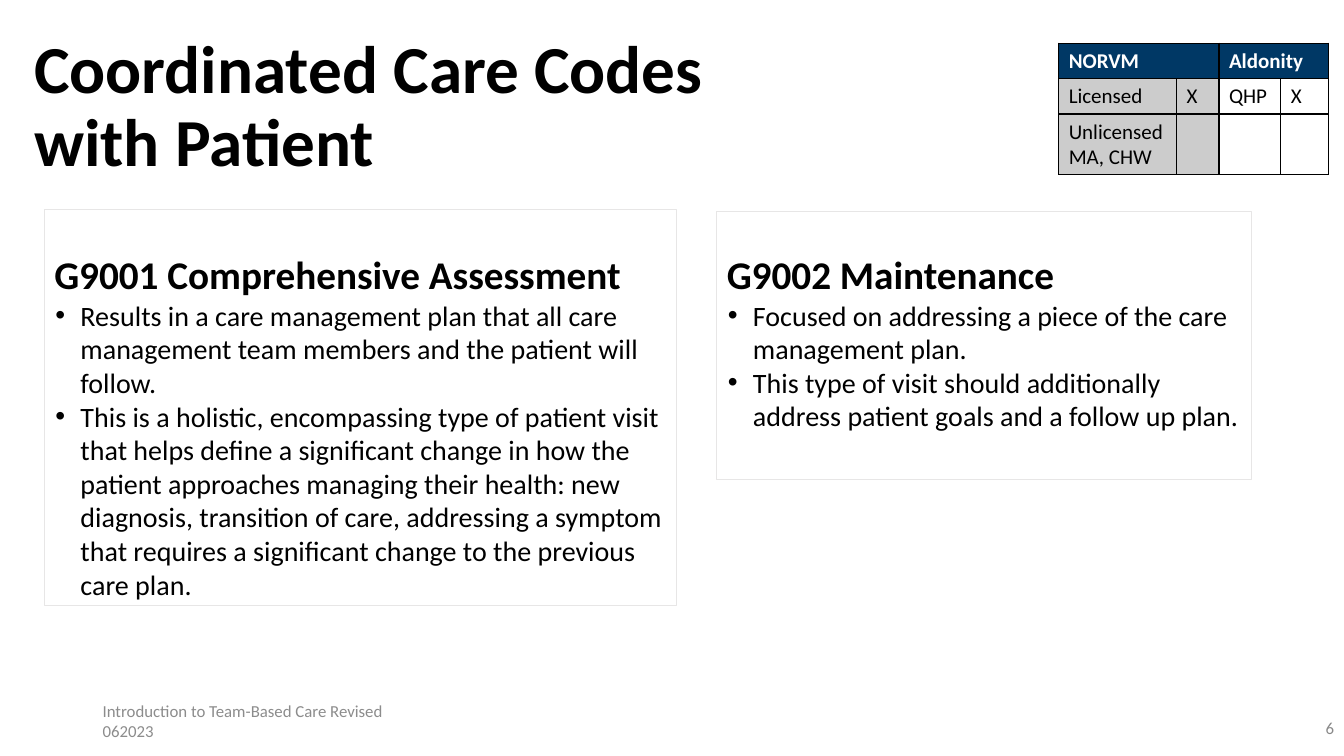
import pptx
import pptx.util
import pptx.dml.color
import pptx.enum.shapes
import pptx.enum.text
import pptx.oxml.ns
import lxml.etree

Anchor = pptx.enum.text.MSO_ANCHOR
Align = pptx.enum.text.PP_ALIGN
qn = pptx.oxml.ns.qn


def color(hex_string):
    return pptx.dml.color.RGBColor.from_string(hex_string)


class CareSlide:
    """Style and current slide; lengths are percentages of the slide's size."""

    FONT = "Calibri"
    BLACK, WHITE, NAVY = "000000", "FFFFFF", "003865"
    PANEL_LINE, SHADE = "E7E6E6", "CCCCCC"

    def __init__(self, deck):
        self.deck = deck
        self.slide = deck.slides.add_slide(deck.slide_layouts[6])

    def across(self, share):
        return int(self.deck.slide_width * share / 100)

    def down(self, share):
        return int(self.deck.slide_height * share / 100)

    def place(self, left, top, width, height):
        return self.across(left), self.down(top), self.across(width), self.down(height)

    def run(self, paragraph, words, size, ink=BLACK, bold=False):
        run = paragraph.add_run()
        run.text = words
        run.font.name = self.FONT
        run.font.size = pptx.util.Pt(size)
        run.font.bold = bold
        run.font.color.rgb = color(ink)

    def bullet(self, paragraph):
        properties = paragraph._p.get_or_add_pPr()
        properties.set("marL", str(pptx.util.Inches(0.26)))
        properties.set("indent", str(pptx.util.Inches(-0.25)))
        lxml.etree.SubElement(properties, qn("a:buFont"), typeface="Arial")
        lxml.etree.SubElement(properties, qn("a:buChar"), char="•")

    def text(self, area, lines, size, ink=BLACK, bold=False,
             anchor=Anchor.MIDDLE, align=Align.LEFT, spacing=1.0):
        frame = self.slide.shapes.add_textbox(*self.place(*area)).text_frame
        frame.word_wrap = True
        frame.vertical_anchor = anchor
        paragraph = frame.paragraphs[0]
        paragraph.alignment = align
        paragraph.line_spacing = spacing
        for number, line in enumerate(lines):
            if number:
                paragraph.add_line_break()
            self.run(paragraph, line, size, ink, bold)

    def panel(self, area, heading, points, bottom_inset=0.05):
        panel = self.slide.shapes.add_shape(
            pptx.enum.shapes.MSO_SHAPE.RECTANGLE, *self.place(*area))
        panel.shadow.inherit = False
        panel.fill.background()
        panel.line.color.rgb = color(self.PANEL_LINE)
        panel.line.width = pptx.util.Pt(0.75)
        frame = panel.text_frame
        frame.word_wrap = True
        frame.vertical_anchor = Anchor.BOTTOM
        frame.margin_bottom = pptx.util.Inches(bottom_inset)
        title = frame.paragraphs[0]
        title.alignment = Align.LEFT
        title.line_spacing = 0.9
        self.run(title, heading, 28, bold=True)
        for point in points:
            paragraph = frame.add_paragraph()
            paragraph.alignment = Align.LEFT
            self.bullet(paragraph)
            self.run(paragraph, point, 20)

    def cell_borders(self, cell):
        properties = cell._tc.get_or_add_tcPr()
        for side in ("a:lnL", "a:lnR", "a:lnT", "a:lnB"):
            border = lxml.etree.SubElement(
                properties, qn(side), w=str(pptx.util.Pt(1)))
            fill = lxml.etree.SubElement(border, qn("a:solidFill"))
            lxml.etree.SubElement(fill, qn("a:srgbClr"), val=self.BLACK)

    def payer_table(self, left, top, widths, heights, rows):
        area = self.place(left, top, sum(widths), sum(heights))
        table = self.slide.shapes.add_table(len(rows), len(widths), *area).table
        table.first_row = table.horz_banding = False
        for column, width in zip(table.columns, widths):
            column.width = self.across(width)
        for row, height in zip(table.rows, heights):
            row.height = self.down(height)
        for r, row in enumerate(rows):
            for c, lines in enumerate(row):
                cell = table.cell(r, c)
                header = r == 0
                self.cell_borders(cell)
                cell.fill.solid()
                cell.fill.fore_color.rgb = color(
                    self.NAVY if header else self.SHADE if c < 2 else self.WHITE)
                frame = cell.text_frame
                for number, line in enumerate(lines):
                    paragraph = frame.add_paragraph() if number else frame.paragraphs[0]
                    self.run(paragraph, line, 15,
                             self.WHITE if header else self.BLACK, header)
        # Each payer heading spans two columns
        for c in range(0, len(widths), 2):
            table.cell(0, c).merge(table.cell(0, c + 1))


def main():
    deck = pptx.Presentation()
    deck.slide_width = pptx.util.Inches(13.33)
    deck.slide_height = pptx.util.Inches(7.5)
    care = CareSlide(deck)

    # Title
    care.text((1.8, 4.67, 73.07, 19.33),
              ["Coordinated Care Codes", "with Patient"],
              48, bold=True, spacing=0.9)

    # Care code panels
    care.panel((3.3, 27.73, 47.04, 52.4), "G9001 Comprehensive Assessment", [
        "Results in a care management plan that all care management team "
        "members and the patient will follow.",
        "This is a holistic, encompassing type of patient visit that helps "
        "define a significant change in how the patient approaches managing "
        "their health: new diagnosis, transition of care, addressing a symptom "
        "that requires a significant change to the previous care plan.",
    ])
    care.panel((53.34, 28, 39.76, 35.47), "G9002 Maintenance", [
        "Focused on addressing a piece of the care management plan.",
        "This type of visit should additionally address patient goals and a "
        "follow up plan.",
    ], bottom_inset=0.47)

    # Who may bill, by payer
    care.payer_table(78.77, 5.73, [8.78, 3.15, 4.6, 3.55], [4.53, 4.53, 7.87], [
        [["NORVM"], [], ["Aldonity"], []],
        [["Licensed"], ["X"], ["QHP"], ["X"]],
        [["Unlicensed", "MA, CHW"], [], [], []],
    ])

    # Footer and slide number
    care.text((77.5, 94.53, 22.5, 5.33), ["6"], 12, "898989",
              anchor=Anchor.TOP, align=Align.RIGHT, spacing=0.9)
    care.text((6.9, 92.67, 22.5, 5.33),
              ["Introduction to Team-Based Care Revised 062023"], 12, "8C8C8C")

    deck.save("out.pptx")


if __name__ == "__main__":
    main()
